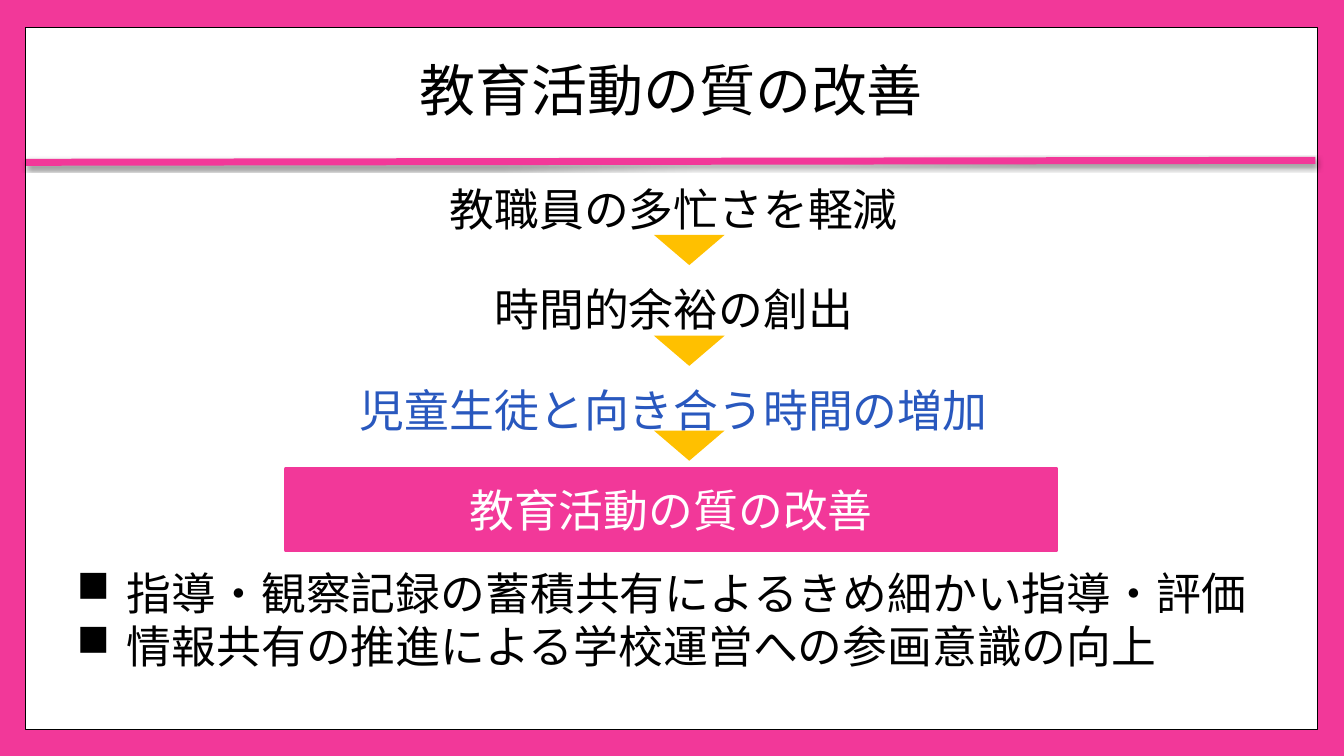
from lxml import etree
from pptx import Presentation
from pptx.dml.color import RGBColor
from pptx.enum import shapes, text
from pptx.oxml import parse_xml
from pptx.oxml.ns import nsdecls, qn
from pptx.util import Cm, Pt

# Content
TITLE = "教育活動の質の改善"
STEPS = [("教職員の多忙さを軽減", "black"),
         ("時間的余裕の創出", "black"),
         ("児童生徒と向き合う時間の増加", "blue")]
GOAL = "教育活動の質の改善"
BENEFITS = ["指導・観察記録の蓄積共有によるきめ細かい指導・評価",
            "情報共有の推進による学校運営への参画意識の向上"]


class Theme:
    colours = {"pink": "F23899", "white": "FFFFFF", "black": "000000",
               "blue": "2958BE", "amber": "FFC000"}
    title_font, body_font = "Cabin", "Arial"
    title_size, body_size = 40, 32

    @classmethod
    def colour(cls, name):
        return RGBColor.from_string(cls.colours[name])


# Places in cm: left, top, width, height
PANEL = (0.64, 0.69, 32.56, 17.7)
TITLE_AREA = (0.66, 0.91, 32.51, 2.9)
STEPS_AREA = (1.68, 3.78, 30.48, 13.56)
GOAL_AREA = (7.21, 11.81, 19.41, 2.06)
BENEFITS_AREA = (1.68, 14.12, 31.45, 3)
RULE = (0.66, 4.09, 33.15, 4.04)
ARROW_LEFT, ARROW_WIDTH, ARROW_HEIGHT = 16.48, 1.78, 0.76
ARROW_TOPS = [5.92, 8.46, 10.85]
INDENT = 1.27

deck = Presentation()
deck.slide_width, deck.slide_height = Cm(33.87), Cm(19.05)
page = deck.slides.add_slide(deck.slide_layouts[6])
page.background.fill.solid()
page.background.fill.fore_color.rgb = Theme.colour("pink")


def add_block(preset, area, fill, line=None, width=0):
    box = page.shapes.add_shape(preset, *map(Cm, area))
    box.shadow.inherit = False
    box.fill.solid()
    box.fill.fore_color.rgb = Theme.colour(fill)
    if line:
        box.line.color.rgb = Theme.colour(line)
        box.line.width = Pt(width)
    else:
        box.line.fill.background()
    return box


def add_text_area(area, wrap=True):
    box = page.shapes.add_textbox(*map(Cm, area))
    box.text_frame.word_wrap = wrap
    return box.text_frame


def write(frame, index, words, colour="black", align=text.PP_ALIGN.CENTER,
          font=Theme.body_font, size=Theme.body_size):
    para = frame.add_paragraph() if index else frame.paragraphs[0]
    para.alignment = align
    span = para.add_run()
    span.text = words
    span.font.name, span.font.size = font, Pt(size)
    span.font.color.rgb = Theme.colour(colour)
    return para


# White panel and pink rule with its soft shadow
add_block(shapes.MSO_SHAPE.RECTANGLE, PANEL, "white", "black", 1)
rule = page.shapes.add_connector(shapes.MSO_CONNECTOR.STRAIGHT, *map(Cm, RULE))
rule.line.color.rgb = Theme.colour("pink")
rule.line.width = Pt(5)
rule._element.spPr.append(parse_xml(
    f'<a:effectLst {nsdecls("a")}>'
    f'<a:outerShdw blurRad="{Pt(3)}" dist="{Pt(2)}" dir="5400000" rotWithShape="0">'
    f'<a:srgbClr val="{Theme.colours["black"]}"><a:alpha val="45000"/></a:srgbClr>'
    '</a:outerShdw></a:effectLst>'))

# Title
title = add_text_area(TITLE_AREA)
title.vertical_anchor = text.MSO_ANCHOR.MIDDLE
write(title, 0, TITLE, font=Theme.title_font, size=Theme.title_size).line_spacing = 0.9

# Steps
steps = add_text_area(STEPS_AREA)
for index, (words, colour) in enumerate(STEPS):
    para = write(steps, index, words, colour)
    para.line_spacing, para.space_before = 1.5, Pt(14)
    para._p.get_or_add_pPr().set("marL", str(Cm(0.13)))

# Goal
goal = add_block(shapes.MSO_SHAPE.RECTANGLE, GOAL_AREA, "pink", "pink", 3).text_frame
goal.vertical_anchor = text.MSO_ANCHOR.MIDDLE
write(goal, 0, GOAL, "white")

# Benefits with square bullets
benefits = add_text_area(BENEFITS_AREA, wrap=False)
benefits.auto_size = text.MSO_AUTO_SIZE.SHAPE_TO_FIT_TEXT
for index, words in enumerate(BENEFITS):
    para = write(benefits, index, words, align=text.PP_ALIGN.LEFT)
    props = para._p.get_or_add_pPr()
    props.set("marL", str(Cm(INDENT)))
    props.set("indent", str(-Cm(INDENT)))
    etree.SubElement(props, qn("a:buChar")).set("char", "■")

# Arrows between the steps
for top in ARROW_TOPS:
    arrow = add_block(shapes.MSO_SHAPE.ISOSCELES_TRIANGLE,
                      (ARROW_LEFT, top, ARROW_WIDTH, ARROW_HEIGHT), "amber")
    arrow.rotation = 180

deck.save("out.pptx")
